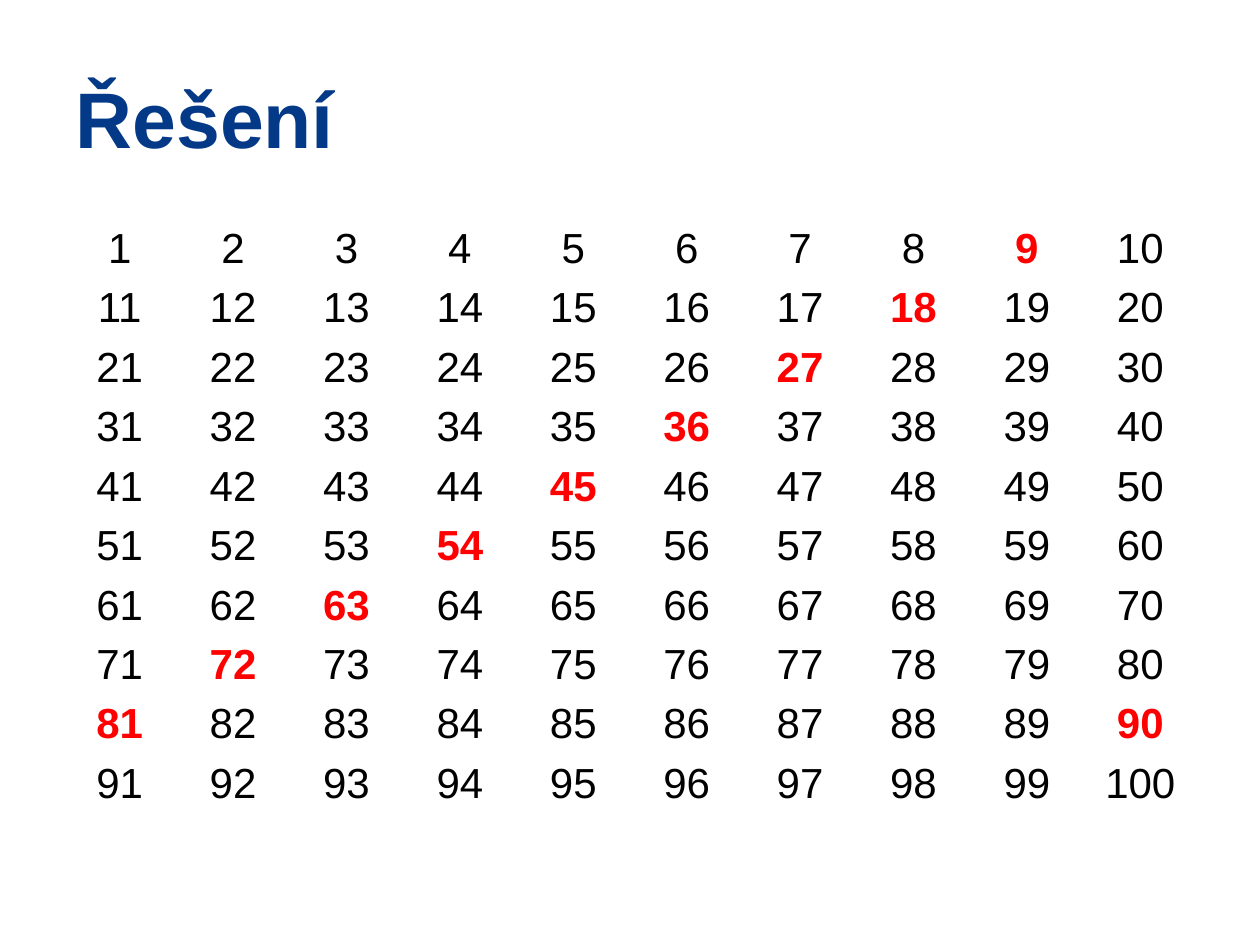
from pptx import Presentation
from pptx.dml.color import RGBColor
from pptx.enum.text import MSO_ANCHOR, PP_ALIGN
from pptx.util import Inches, Pt

NAVY = RGBColor(0x04, 0x39, 0x88)
RED = RGBColor(0xFF, 0x00, 0x00)
BLACK = RGBColor(0x00, 0x00, 0x00)
SIZE = 10


def set_font(p, size, color, bold):
    """Format a whole paragraph in Arial."""
    p.font.name = "Arial"
    p.font.size = Pt(size)
    p.font.color.rgb = color
    p.font.bold = bold


def add_title(s, text):
    """Place and format the slide title."""
    sp = s.shapes.title
    sp.left, sp.top = Inches(0.5), Inches(0.3)
    sp.width, sp.height = Inches(9), Inches(1.25)
    tf = sp.text_frame
    tf.text = text
    tf.vertical_anchor = MSO_ANCHOR.MIDDLE
    p = tf.paragraphs[0]
    p.alignment = PP_ALIGN.LEFT
    set_font(p, 45, NAVY, True)


def digit_sum(number):
    """Return the sum of the decimal digits."""
    return sum(int(digit) for digit in str(number))


def fill_cell(cell, number):
    """Write a number, highlighted when its digits add up to nine."""
    hit = digit_sum(number) == 9
    cell.fill.background()
    cell.margin_top = cell.margin_bottom = Inches(0.04)
    cell.text = str(number)
    p = cell.text_frame.paragraphs[0]
    p.alignment = PP_ALIGN.CENTER
    set_font(p, 24, RED if hit else BLACK, hit)


def add_number_table(s):
    """Add the square of numbers from 1 to 100."""
    table = s.shapes.add_table(
        SIZE, SIZE, Inches(0.5), Inches(1.75), Inches(9), Inches(4.72)
    ).table
    table.first_row = table.horz_banding = False
    for number, cell in enumerate(table.iter_cells(), start=1):
        fill_cell(cell, number)


def main():
    """Build and save the slide."""
    prs = Presentation()
    prs.slide_width, prs.slide_height = Inches(10), Inches(7.5)
    s = prs.slides.add_slide(prs.slide_layouts[5])
    add_title(s, "Řešení")
    add_number_table(s)
    # noqa
    prs.save("out.pptx")


if __name__ == "__main__":
    main()
